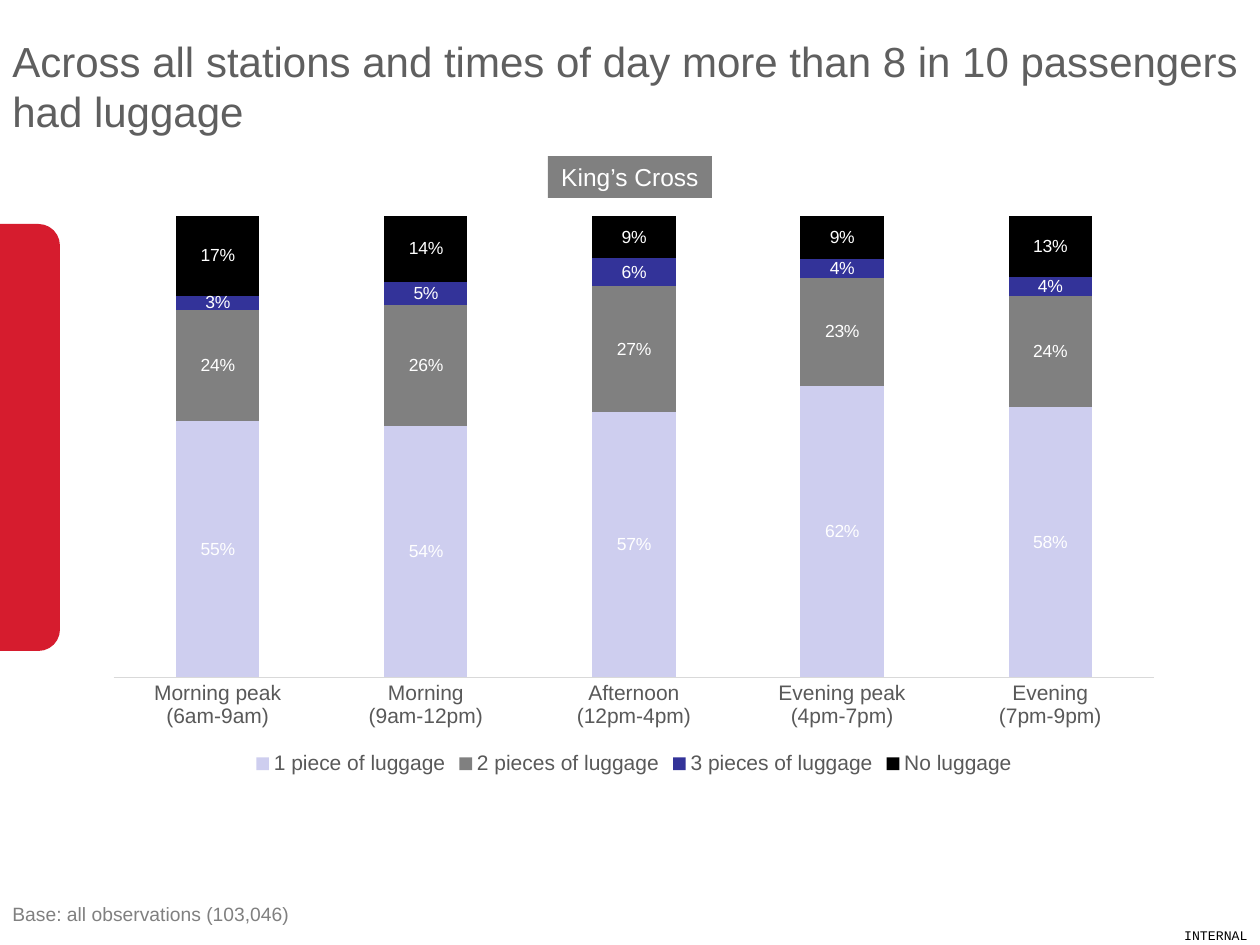
from dataclasses import dataclass

from pptx import Presentation
from pptx.chart.data import CategoryChartData
from pptx.dml.color import RGBColor
from pptx.enum.chart import XL_CHART_TYPE, XL_LABEL_POSITION, XL_LEGEND_POSITION, XL_TICK_MARK
from pptx.enum.shapes import MSO_SHAPE
from pptx.enum.text import MSO_ANCHOR, PP_ALIGN
from pptx.util import Emu, Pt

STACKED = XL_CHART_TYPE.COLUMN_STACKED_100
CENTER = XL_LABEL_POSITION.CENTER
BOTTOM = XL_LEGEND_POSITION.BOTTOM
NO_TICK = XL_TICK_MARK.NONE
RECTANGLE, ROUNDED = MSO_SHAPE.RECTANGLE, MSO_SHAPE.ROUNDED_RECTANGLE
TOP, MIDDLE = MSO_ANCHOR.TOP, MSO_ANCHOR.MIDDLE
LEFT, RIGHT, MIDDLE_ALIGN = PP_ALIGN.LEFT, PP_ALIGN.RIGHT, PP_ALIGN.CENTER

PX_PER_INCH = 126
COLORS = {
    "red": "D61C2E", "grey": "808080", "title": "5F5F5F", "axis_text": "595959",
    "axis_line": "D9D9D9", "lilac": "CECEEF", "indigo": "333399",
    "black": "000000", "white": "FFFFFF",
}


@dataclass
class Area:
    left: int
    top: int
    width: int
    height: int

    def emu(self) -> list[Emu]:
        return [px(n) for n in (self.left, self.top, self.width, self.height)]


@dataclass
class Label:
    text: str
    area: Area
    size: float
    color: str
    font: str = "Arial"
    align: PP_ALIGN = LEFT
    anchor: MSO_ANCHOR = TOP
    wrap: bool = True


@dataclass
class LuggageSeries:
    name: str
    color: str
    shares: tuple[float, ...]


TIMES = ["Morning peak\n(6am-9am)", "Morning\n(9am-12pm)", "Afternoon\n(12pm-4pm)",
         "Evening peak\n(4pm-7pm)", "Evening\n(7pm-9pm)"]
LUGGAGE = [
    LuggageSeries("1 piece of luggage", "lilac", (0.55, 0.54, 0.57, 0.62, 0.58)),
    LuggageSeries("2 pieces of luggage", "grey", (0.24, 0.26, 0.27, 0.23, 0.24)),
    LuggageSeries("3 pieces of luggage", "indigo", (0.03, 0.05, 0.06, 0.04, 0.04)),
    LuggageSeries("No luggage", "black", (0.17, 0.14, 0.09, 0.09, 0.13)),
]
LABELS = [
    Label("INTERNAL", Area(0, 921, 1260, 29), 7.5, "black", "Courier New", RIGHT),
    Label("Base: all observations (103,046)", Area(0, 896, 304, 36), 11, "grey", wrap=False),
    Label("Across all stations and times of day more than 8 in 10 passengers had luggage",
          Area(0, 22, 1260, 127), 24, "title", anchor=MIDDLE),
]
STATION = Label("King’s Cross", Area(548, 156, 164, 42), 14, "white",
                align=MIDDLE_ALIGN, anchor=MIDDLE, wrap=False)


def px(count: int) -> Emu:
    return Emu(round(count * 914400 / PX_PER_INCH))


def rgb(name: str) -> RGBColor:
    return RGBColor.from_string(COLORS[name])


def style_font(font, size: float, color: str, name: str = "Arial") -> None:
    font.size, font.name = Pt(size), name
    font.color.rgb = rgb(color)


def write_text(box, label: Label) -> None:
    frame = box.text_frame
    frame.word_wrap = label.wrap
    frame.vertical_anchor = label.anchor
    para = frame.paragraphs[0]
    para.text = label.text
    para.alignment = label.align
    style_font(para.font, label.size, label.color, label.font)


def add_block(page, kind: MSO_SHAPE, area: Area, color: str):
    block = page.shapes.add_shape(kind, *area.emu())
    block.shadow.inherit = False
    block.fill.solid()
    block.fill.fore_color.rgb = rgb(color)
    block.line.fill.background()
    return block


def add_luggage_chart(page, area: Area) -> None:
    data = CategoryChartData(number_format="0%")
    data.categories = TIMES
    for item in LUGGAGE:
        data.add_series(item.name, item.shares)
    chart = page.shapes.add_chart(STACKED, *area.emu(), data).chart
    style_font(chart.font, 10, "black")
    chart.has_title = False

    chart.has_legend = True
    chart.legend.position = BOTTOM
    chart.legend.include_in_layout = False
    style_font(chart.legend.font, 12, "axis_text")

    shares = chart.value_axis
    shares.visible = False
    shares.has_major_gridlines = False
    shares.minimum_scale = 0
    times = chart.category_axis
    times.major_tick_mark = times.minor_tick_mark = NO_TICK
    style_font(times.tick_labels.font, 12, "axis_text")
    times.format.line.color.rgb = rgb("axis_line")
    times.format.line.width = Pt(0.75)

    plot = chart.plots[0]
    plot.gap_width, plot.overlap = 150, 100
    plot.vary_by_categories = False
    for series, item in zip(plot.series, LUGGAGE):
        series.format.fill.solid()
        series.format.fill.fore_color.rgb = rgb(item.color)
        labels = series.data_labels
        labels.show_value = True
        labels.position = CENTER
        labels.number_format, labels.number_format_is_linked = "0%", False
        style_font(labels.font, 10, "white")


def main() -> None:
    deck = Presentation()
    deck.slide_width, deck.slide_height = px(1260), px(945)
    page = deck.slides.add_slide(deck.slide_layouts[6])
    add_block(page, ROUNDED, Area(-69, 224, 129, 427), "red")
    add_luggage_chart(page, Area(92, 205, 1084, 575))
    write_text(add_block(page, RECTANGLE, STATION.area, "grey"), STATION)
    for label in LABELS:
        write_text(page.shapes.add_textbox(*label.area.emu()), label)
    deck.save("out.pptx")


if __name__ == "__main__":
    main()
